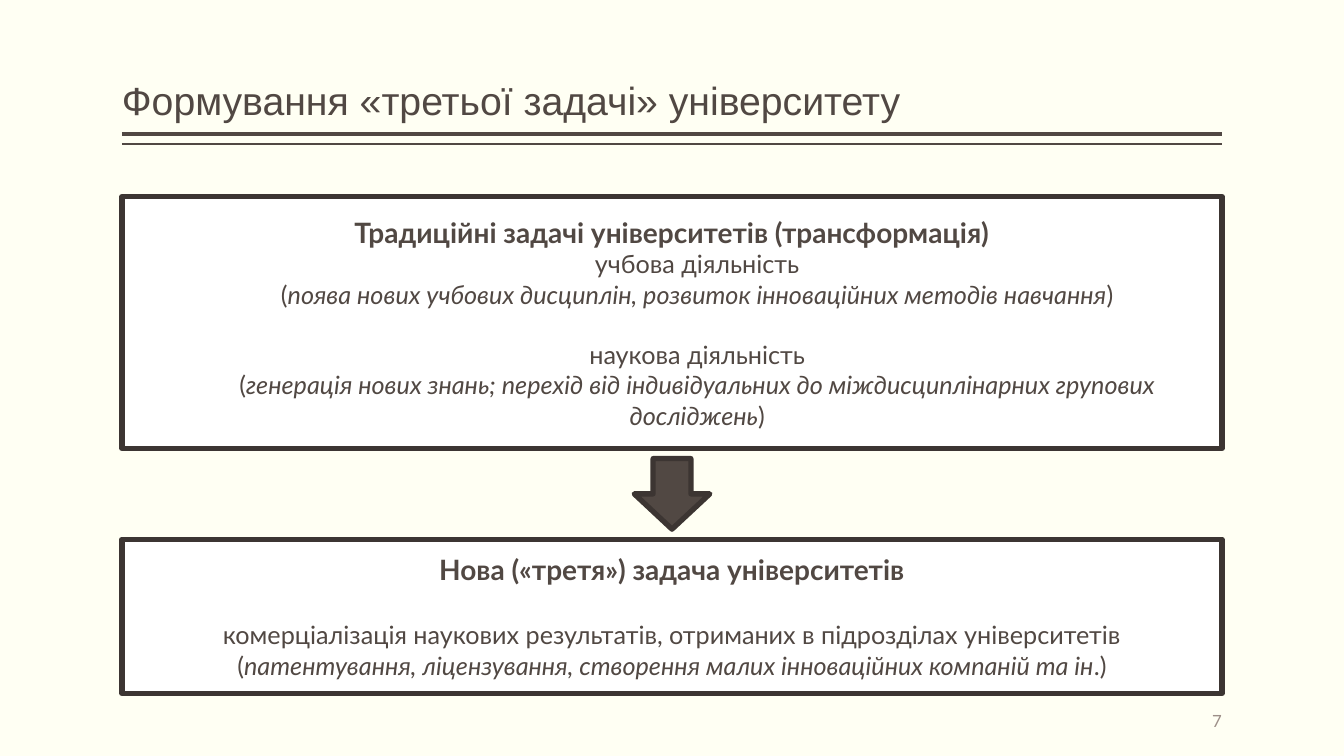
from lxml.etree import SubElement
from pptx import Presentation
from pptx.dml.color import RGBColor
from pptx.enum.shapes import MSO_CONNECTOR, MSO_SHAPE
from pptx.enum.text import MSO_ANCHOR, MSO_AUTO_SIZE, PP_ALIGN
from pptx.oxml.ns import qn
from pptx.util import Inches, Pt

SLIDE_W, SLIDE_H = 13.33, 7.5
LEFT, WIDTH = 1.21, 10.91
BACK, TEXT, EDGE, MUTED, WHITE = "FFFFF3", "514843", "3C3532", "9D8F88", "FFFFFF"
HEADING = dict(size=Pt(20), bold=True)
DETAIL = dict(size=Pt(18), bold=False)

# Each line: runs (odd ones italic), space before in points
TRADITIONAL = [
    (["учбова діяльність"], 0),
    (["(", "поява нових учбових дисциплін, розвиток інноваційних методів навчання", ")"], 0),
    (["наукова діяльність"], 21.6),
    (["(", "генерація нових знань; перехід від індивідуальних до "
      "міждисциплінарних групових досліджень", ")"], 0),
]
NEW = [
    (["комерціалізація наукових результатів, отриманих в підрозділах університетів"], 24),
    (["(", "патентування, ліцензування, створення малих інноваційних компаній та ін", ".)"], 0),
]


def color(value):
    return RGBColor.from_string(value)


def inches(*box):
    return [Inches(v) for v in box]


def add_run(p, text, fill=TEXT, name="Lato", **formats):
    r = p.add_run()
    r.text = text
    r.font.color.rgb = color(fill)
    for key, value in dict(formats, name=name).items():
        setattr(r.font, key, value)


def format_frame(tf, anchor, **margins):
    formats = dict(margins, word_wrap=True, auto_size=MSO_AUTO_SIZE.NONE, vertical_anchor=anchor)
    for key, value in formats.items():
        setattr(tf, key, value)


def add_block(s, kind, box, fill):
    sp = s.shapes.add_shape(kind, *inches(*box))
    sp.shadow.inherit = False
    sp.fill.solid()
    sp.fill.fore_color.rgb = color(fill)
    sp.line.color.rgb = color(EDGE)
    sp.line.width = Pt(3.78)
    SubElement(sp.line._ln, qn("a:round"))
    return sp


def add_header(s, box, text):
    """Title with a thick and a thin rule below it."""
    left, top, width, height = box
    title = s.shapes.title
    title.left, title.top, title.width, title.height = inches(*box)
    format_frame(title.text_frame, MSO_ANCHOR.BOTTOM, margin_left=0, margin_right=0)
    p = title.text_frame.paragraphs[0]
    p.alignment, p.line_spacing = PP_ALIGN.LEFT, 0.9
    add_run(p, text, name="Arial", size=Pt(28))
    for gap, weight in ((0.05, 3), (0.15, 1)):
        y = top + height + gap
        rule = s.shapes.add_connector(MSO_CONNECTOR.STRAIGHT, *inches(left, y, left + width, y))
        rule.line.color.rgb = color(TEXT)
        rule.line.width = Pt(weight)
        SubElement(rule._element.spPr, qn("a:effectLst"))


def add_task(s, box, heading, lines, indent=0):
    """Framed task: bold heading and centred details."""
    tf = add_block(s, MSO_SHAPE.RECTANGLE, box, WHITE).text_frame
    format_frame(tf, MSO_ANCHOR.MIDDLE)
    p = tf.paragraphs[0]
    p.alignment = PP_ALIGN.CENTER
    add_run(p, heading, **HEADING)
    for runs, space in lines:
        p = tf.add_paragraph()
        p.alignment, p.space_before = PP_ALIGN.CENTER, Pt(space)
        p._p.get_or_add_pPr().set("marL", str(Inches(indent)))
        for i, text in enumerate(runs):
            add_run(p, text, italic=i % 2 == 1, **DETAIL)


def add_number(s, box, text):
    tf = s.shapes.add_textbox(*inches(*box)).text_frame
    format_frame(tf, MSO_ANCHOR.MIDDLE, margin_left=0, margin_right=0)
    tf.paragraphs[0].alignment = PP_ALIGN.RIGHT
    add_run(tf.paragraphs[0], text, MUTED, size=Pt(12))


def main():
    prs = Presentation()
    prs.slide_width, prs.slide_height = inches(SLIDE_W, SLIDE_H)
    s = prs.slides.add_slide(prs.slide_layouts[5])
    s.background.fill.solid()
    s.background.fill.fore_color.rgb = color(BACK)

    add_header(s, (LEFT, 0.08, WIDTH, 1.2), "Формування «третьої задачі» університету")
    add_task(s, (LEFT, 1.95, WIDTH, 2.5),
             "Традиційні задачі університетів (трансформація)", TRADITIONAL, indent=0.5)
    add_task(s, (LEFT, 5.35, WIDTH, 1.53), "Нова («третя») задача університетів", NEW)
    # Arrow between the tasks
    add_block(s, MSO_SHAPE.DOWN_ARROW, (LEFT + (WIDTH - 0.75) / 2, 4.55, 0.75, 0.7), TEXT)
    add_number(s, (LEFT + WIDTH - 2, 6.95, 2, 0.4), "7")
    prs.save("out.pptx")


if __name__ == "__main__":
    main()
